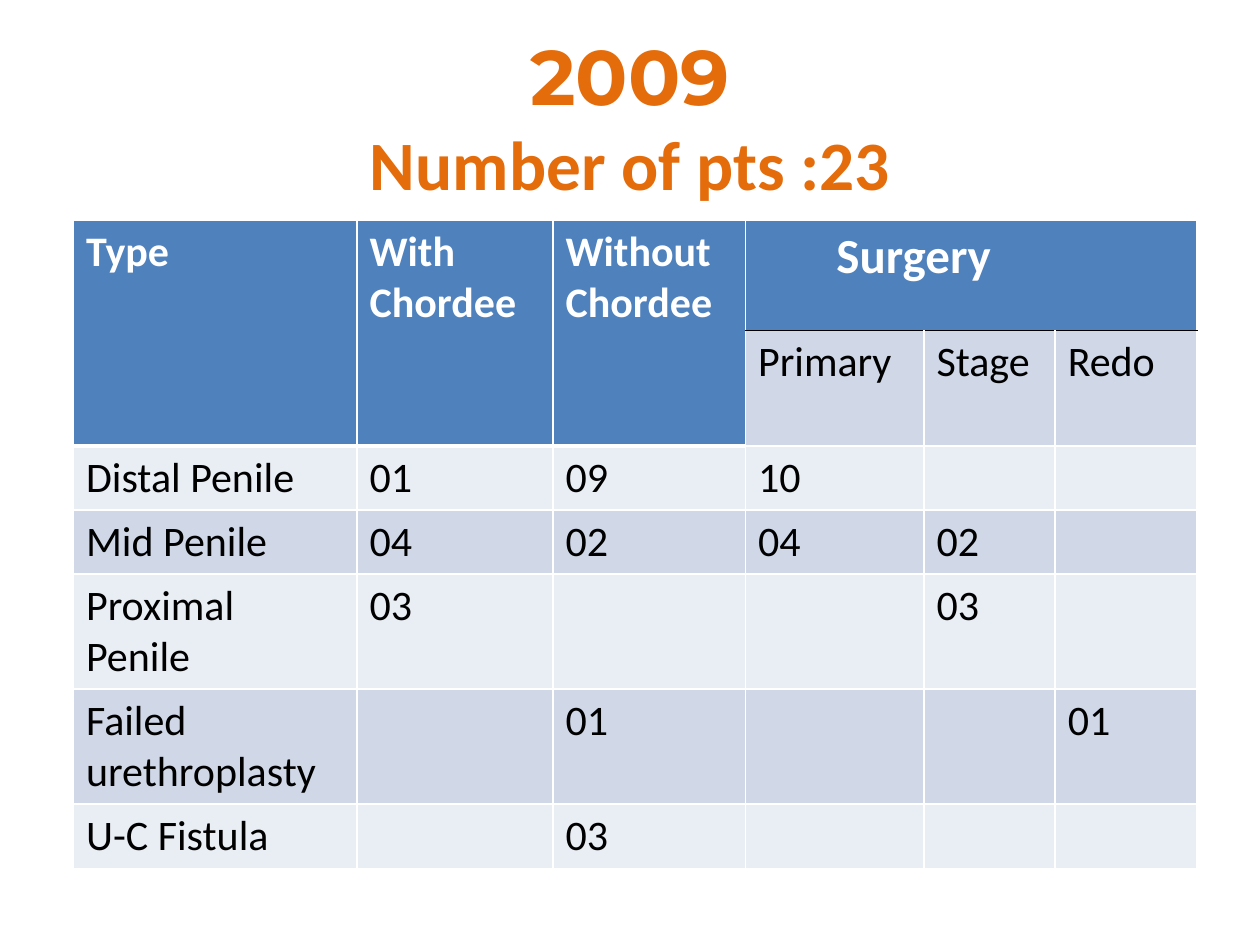
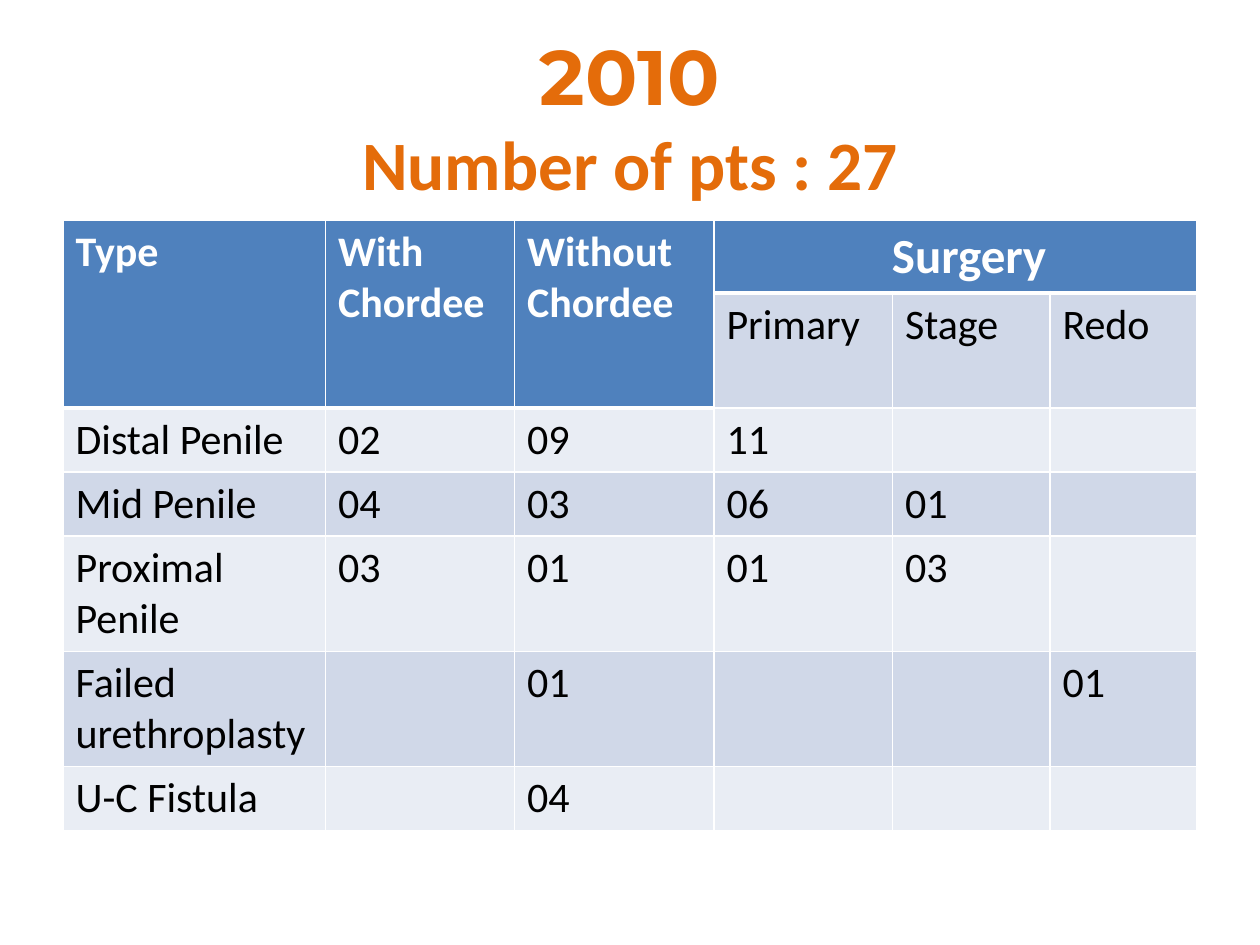
import pptx
import pptx.dml.color
import pptx.enum.text
import pptx.oxml.ns
import pptx.util
from lxml import etree

Pt = pptx.util.Pt

COLOURS = {
    "title": "E46C0A",
    "header": "4F81BD",
    "header_text": "FFFFFF",
    "band_dark": "D0D8E8",
    "band_light": "E9EDF4",
    "body_text": "000000",
    "grid": "FFFFFF",
    "black_rule": "000000",
}
YEAR = {"name": "Montserrat", "size": Pt(44.1), "bold": True}
COUNT = {"name": "Calibri", "size": Pt(39.6), "bold": True}
HEADER = {"name": "Calibri", "size": Pt(24), "bold": True}
SURGERY = {"name": "Calibri", "size": Pt(28), "bold": True}
BODY = {"name": "Calibri", "size": Pt(24), "bold": False}

# Grid rules: (colour, width in points)
THIN = ("grid", 1)
THICK = ("grid", 3)
BLACK = ("black_rule", 1)

TABLE_TOP = 126
ONE_LINE, TWO_LINES = 36.6, 65.8
BODY_HEIGHTS = [ONE_LINE, ONE_LINE, TWO_LINES, TWO_LINES, ONE_LINE]
TYPES = ["Distal Penile", "Mid Penile", "Proximal Penile",
         "Failed urethroplasty", "U-C Fistula"]
SURGERY_KINDS = ["Primary", "Stage", "Redo"]
FIRST_SURGERY_COLUMN = 3

YEARS = [
    {
        "year": "2009", "count": "Number of pts :23", "left": 42,
        "widths": [162, 112, 110, 102, 75, 81],
        "header_heights": [63, 65.8],
        "headings": ["Type", "With\nChordee", "Without Chordee"],
        "surgery_indent": 52, "surgery_rule": BLACK,
        "values": [["01", "09", "10", "", ""],
                   ["04", "02", "04", "02", ""],
                   ["03", "", "", "03", ""],
                   ["", "01", "", "", "01"],
                   ["", "03", "", "", ""]],
    },
    {
        "year": "2010", "count": "Number of pts : 27", "left": 36,
        "widths": [150, 108, 114, 102, 90, 84],
        "header_heights": [41.2, 65.8],
        "headings": ["Type", "With Chordee", "Without Chordee"],
        "surgery_indent": 101.7, "surgery_rule": THICK,
        "values": [["02", "09", "11", "", ""],
                   ["04", "03", "06", "01", ""],
                   ["03", "01", "01", "03", ""],
                   ["", "01", "", "", "01"],
                   ["", "04", "", "", ""]],
    },
]


def rgb(colour):
    return pptx.dml.color.RGBColor.from_string(COLOURS[colour])


def format_run(run, style, colour):
    for attribute, value in style.items():
        setattr(run.font, attribute, value)
    run.font.color.rgb = rgb(colour)


def add_title(slide, year, count):
    title = slide.shapes.title
    place = {"left": 36, "top": 21.6, "width": 648, "height": 90}
    for attribute, value in place.items():
        setattr(title, attribute, Pt(value))
    frame = title.text_frame
    frame.auto_size = pptx.enum.text.MSO_AUTO_SIZE.NONE
    frame.vertical_anchor = pptx.enum.text.MSO_ANCHOR.MIDDLE
    heading = frame.paragraphs[0]
    heading.alignment = pptx.enum.text.PP_ALIGN.CENTER
    for line, style in ((year, YEAR), (count, COUNT)):
        if heading.runs:
            heading.add_line_break()
        run = heading.add_run()
        run.text = line
        format_run(run, style, "title")


def set_borders(cell, top, bottom):
    properties = cell._tc.get_or_add_tcPr()
    sides = {"lnL": THIN, "lnR": THIN, "lnT": top, "lnB": bottom}
    for side, (colour, width) in sides.items():
        line = etree.SubElement(properties, pptx.oxml.ns.qn("a:" + side),
                                w=str(Pt(width)))
        fill = etree.SubElement(line, pptx.oxml.ns.qn("a:solidFill"))
        etree.SubElement(fill, pptx.oxml.ns.qn("a:srgbClr"),
                         val=COLOURS[colour])


def fill_cell(cell, text, style, fill, colour):
    cell.fill.solid()
    cell.fill.fore_color.rgb = rgb(fill)
    cell.text = text
    for paragraph in cell.text_frame.paragraphs:
        for run in paragraph.runs:
            format_run(run, style, colour)


def rule_below(row, column, surgery_rule):
    """The rule under a cell; the cell beneath takes it as its top rule."""
    if row == 0 and column >= FIRST_SURGERY_COLUMN:
        return surgery_rule
    if row == 1 and column < FIRST_SURGERY_COLUMN:
        return THICK
    return THIN


def add_patient_table(slide, data):
    heights = data["header_heights"] + BODY_HEIGHTS
    widths = data["widths"]
    table = slide.shapes.add_table(
        len(heights), len(widths), Pt(data["left"]), Pt(TABLE_TOP),
        Pt(sum(widths)), Pt(sum(heights))).table
    for column, width in zip(table.columns, widths):
        column.width = Pt(width)
    for row, height in zip(table.rows, heights):
        row.height = Pt(height)

    # Borders
    for row in range(len(heights)):
        for column in range(len(widths)):
            set_borders(table.cell(row, column),
                        rule_below(row - 1, column, data["surgery_rule"]),
                        rule_below(row, column, data["surgery_rule"]))

    # Header
    for column, heading in enumerate(data["headings"]):
        cell = table.cell(0, column)
        cell.merge(table.cell(1, column))
        fill_cell(cell, heading, HEADER, "header", "header_text")
    surgery = table.cell(0, FIRST_SURGERY_COLUMN)
    surgery.merge(table.cell(0, len(widths) - 1))
    surgery.margin_left = Pt(data["surgery_indent"])
    fill_cell(surgery, "Surgery", SURGERY, "header", "header_text")
    for column, kind in enumerate(SURGERY_KINDS, FIRST_SURGERY_COLUMN):
        fill_cell(table.cell(1, column), kind, BODY, "band_dark", "body_text")

    # Body
    for row, (kind, values) in enumerate(zip(TYPES, data["values"]), 2):
        band = "band_dark" if row % 2 else "band_light"
        for column, text in enumerate([kind] + values):
            fill_cell(table.cell(row, column), text, BODY, band, "body_text")


def main():
    deck = pptx.Presentation()
    deck.slide_width, deck.slide_height = Pt(720), Pt(540)
    title_only = deck.slide_layouts[5]
    for data in YEARS:
        slide = deck.slides.add_slide(title_only)
        add_title(slide, data["year"], data["count"])
        add_patient_table(slide, data)
    deck.save("out.pptx")


if __name__ == "__main__":
    main()
